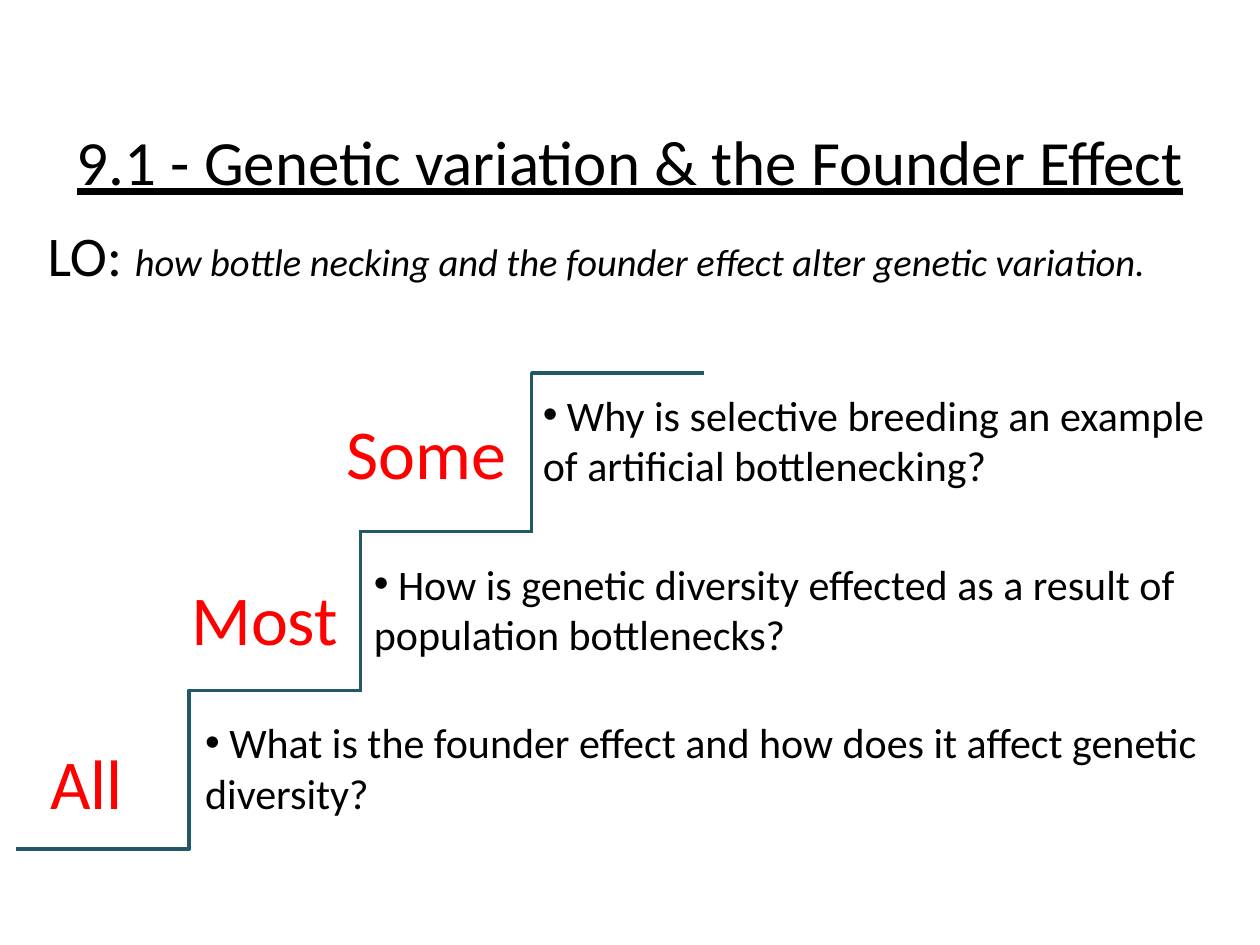
from dataclasses import dataclass

from lxml.etree import SubElement
from pptx import Presentation
from pptx.dml.color import RGBColor
from pptx.enum.shapes import MSO_CONNECTOR as Connector
from pptx.enum.text import MSO_ANCHOR as Anchor, MSO_AUTO_SIZE as AutoSize, PP_ALIGN as Align
from pptx.oxml.ns import qn
from pptx.util import Inches, Pt

COLUMNS, ROWS = 100, 75  # grid cells across and down the slide


def color(hex_string):
    return RGBColor.from_string(hex_string)


@dataclass
class SlideBuilder:
    presentation: object
    slide: object
    font: str = "Calibri"
    ink: str = "000000"
    label_ink: str = "FF0000"
    stair_ink: str = "215968"

    def place(self, column, row):
        return (round(self.presentation.slide_width * column / COLUMNS),
                round(self.presentation.slide_height * row / ROWS))

    def style(self, run, size, ink=None, italic=None, underline=None):
        font = run.font
        font.name, font.size = self.font, Pt(size)
        font.italic, font.underline = italic, underline
        font.color.rgb = color(ink or self.ink)

    def title(self, text, box, size):
        shape = self.slide.shapes.title
        shape.left, shape.top = self.place(*box[:2])
        shape.width, shape.height = self.place(*box[2:])
        frame = shape.text_frame
        frame.text = text
        frame.vertical_anchor = Anchor.TOP
        frame.auto_size = AutoSize.NONE
        frame.paragraphs[0].alignment = Align.CENTER
        self.style(frame.paragraphs[0].runs[0], size, underline=True)

    def text(self, text, box, size, ink=None):
        shape = self.slide.shapes.add_textbox(*self.place(*box[:2]), *self.place(*box[2:]))
        frame = shape.text_frame
        frame.word_wrap = True
        frame.text = text
        paragraph = frame.paragraphs[0]
        self.style(paragraph.runs[0], size, ink)
        return paragraph

    def bullet(self, text, box, size):
        properties = self.text(text, box, size)._p.get_or_add_pPr()
        SubElement(properties, qn("a:buFont"), typeface="Arial")
        SubElement(properties, qn("a:buChar"), char="•")

    def stair(self, column, row, width, height):
        line = self.slide.shapes.add_connector(
            Connector.ELBOW, *self.place(column, row),
            *self.place(column + width, row - height))
        line.line.color.rgb = color(self.stair_ink)
        line.line.width = Pt(2)
        SubElement(line._element.spPr, qn("a:effectLst"))


def main():
    presentation = Presentation()
    presentation.slide_width, presentation.slide_height = Inches(10), Inches(7.5)
    slide = presentation.slides.add_slide(presentation.slide_layouts[5])
    builder = SlideBuilder(presentation, slide)

    # Title and learning objective
    builder.title("9.1 - Genetic variation & the Founder Effect", (0, 9.2, 100, 7.1), 36)
    objective = builder.text("LO: ", (2.8, 17, 93, 6.4), 32)
    detail = objective.add_run()
    detail.text = "how bottle necking and the founder effect alter genetic variation."
    builder.style(detail, 22, italic=True)

    # Staircase from bottom to top: label, label box, question, question box
    steps = [
        ("All", (3, 58.2, 19.3, 7.7),
         " What is the founder effect and how does it affect genetic diversity?",
         (15.3, 56.4, 82.7, 9.1)),
        ("Most", (14.2, 45.2, 21.8, 7.7),
         " How is genetic diversity effected as a result of population bottlenecks?",
         (28.7, 43.8, 71.3, 9.1)),
        ("Some", (26.5, 32, 31, 7.7),
         " Why is selective breeding an example of artificial bottlenecking?",
         (42.1, 30.4, 57.9, 9.1)),
    ]
    run, rise = 13.6, 12.6
    for index, (label, label_box, question, question_box) in enumerate(steps):
        builder.stair(1.3 + index * run, 67.4 - index * rise, 27.4, rise)
        builder.text(label, label_box, 40, builder.label_ink)
        builder.bullet(question, question_box, 24)

    presentation.save("out.pptx")


if __name__ == "__main__":
    main()
